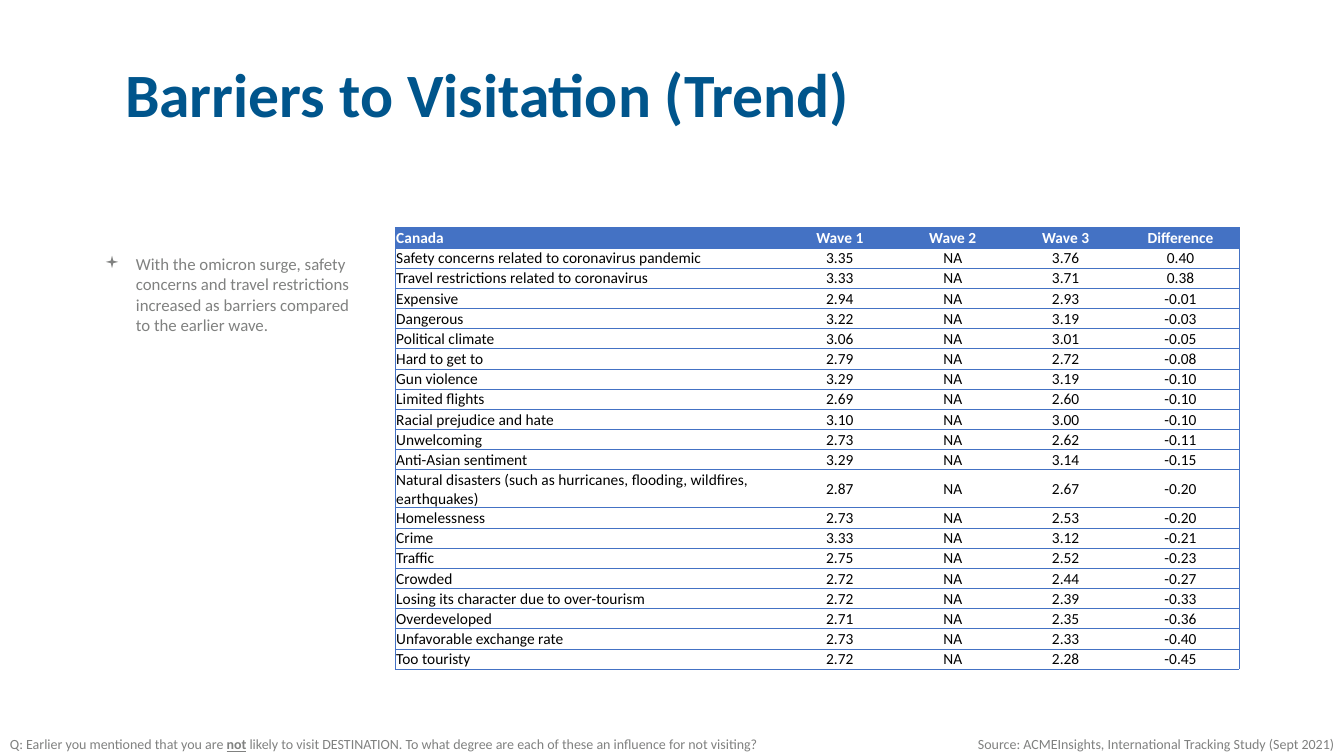
from lxml.etree import SubElement
from pptx import Presentation
from pptx.dml.color import RGBColor
from pptx.enum.text import MSO_ANCHOR, MSO_AUTO_SIZE, PP_ALIGN
from pptx.oxml.ns import qn
from pptx.util import Inches, Pt

HUES = {"title": "00558C", "grey": "808180", "blue": "4472C4",
        "white": "FFFFFF", "black": "000000"}
ROWS = [
    ("Canada", "Wave 1", "Wave 2", "Wave 3", "Difference"),
    ("Safety concerns related to coronavirus pandemic",
     "3.35", "NA", "3.76", "0.40"),
    ("Travel restrictions related to coronavirus",
     "3.33", "NA", "3.71", "0.38"),
    ("Expensive", "2.94", "NA", "2.93", "-0.01"),
    ("Dangerous", "3.22", "NA", "3.19", "-0.03"),
    ("Political climate", "3.06", "NA", "3.01", "-0.05"),
    ("Hard to get to", "2.79", "NA", "2.72", "-0.08"),
    ("Gun violence", "3.29", "NA", "3.19", "-0.10"),
    ("Limited flights", "2.69", "NA", "2.60", "-0.10"),
    ("Racial prejudice and hate", "3.10", "NA", "3.00", "-0.10"),
    ("Unwelcoming", "2.73", "NA", "2.62", "-0.11"),
    ("Anti-Asian sentiment", "3.29", "NA", "3.14", "-0.15"),
    ("Natural disasters (such as hurricanes, flooding, wildfires, "
     "earthquakes)", "2.87", "NA", "2.67", "-0.20"),
    ("Homelessness", "2.73", "NA", "2.53", "-0.20"),
    ("Crime", "3.33", "NA", "3.12", "-0.21"),
    ("Traffic", "2.75", "NA", "2.52", "-0.23"),
    ("Crowded", "2.72", "NA", "2.44", "-0.27"),
    ("Losing its character due to over-tourism",
     "2.72", "NA", "2.39", "-0.33"),
    ("Overdeveloped", "2.71", "NA", "2.35", "-0.36"),
    ("Unfavorable exchange rate", "2.73", "NA", "2.33", "-0.40"),
    ("Too touristy", "2.72", "NA", "2.28", "-0.45"),
]
WIDTHS = [3.85, 1.12, 1.12, 1.12, 1.16]
ROW_H = 0.2

deck = Presentation()
deck.slide_width, deck.slide_height = Inches(13.33), Inches(7.5)
slide = deck.slides.add_slide(deck.slide_layouts[5])


def style(par, size, hue, bold=False, align=PP_ALIGN.LEFT):
    par.alignment = align
    font = par.font
    font.name, font.size, font.bold = "Calibri", Pt(size), bold
    font.color.rgb = RGBColor.from_string(HUES[hue])


def add_note(box, parts, size, align=PP_ALIGN.LEFT):
    """Add a grey, wrapped text box with one run for each part."""
    frame = slide.shapes.add_textbox(*map(Inches, box)).text_frame
    frame.word_wrap = True
    par = frame.paragraphs[0]
    style(par, size, "grey", align=align)
    for part in parts:
        par.add_run().text = part
    return par


# Title
title = slide.shapes.title
title.left, title.top, title.width, title.height = map(
    Inches, (1.14, 0.54, 10.78, 1.97))
frame = title.text_frame
frame.text = "Barriers to Visitation (Trend)"
frame.vertical_anchor = MSO_ANCHOR.TOP
frame.auto_size = MSO_AUTO_SIZE.NONE
head = frame.paragraphs[0]
style(head, 44, "title", bold=True)
head.line_spacing, head.space_before = Pt(50), Pt(10)

# Finding
finding = add_note((0.94, 2.47, 2.63, 1.11), [
    "With the omicron surge, safety concerns and travel restrictions "
    "increased as barriers compared to the earlier wave."], 12)
props = finding._p.get_or_add_pPr()
props.set("marL", str(Inches(0.31)))
props.set("indent", str(-Inches(0.31)))
SubElement(props, qn("a:buFont"), typeface="Wingdings")
SubElement(props, qn("a:buChar"), char="▪")
# Bullet marks come before the default run properties
props.append(props.find(qn("a:defRPr")))

# Table
table = slide.shapes.add_table(
    len(ROWS), len(WIDTHS), Inches(3.92), Inches(2.26),
    Inches(sum(WIDTHS)), Inches(ROW_H * len(ROWS))).table
table.horz_banding = False
for col, width in zip(table.columns, WIDTHS):
    col.width = Inches(width)
for r, row in enumerate(ROWS):
    table.rows[r].height = Inches(ROW_H)
    for c, text in enumerate(row):
        cell = table.cell(r, c)
        cell.text = text
        cell.margin_left = cell.margin_right = cell.margin_top = Inches(0.01)
        cell.margin_bottom = 0
        cell.vertical_anchor = MSO_ANCHOR.MIDDLE if r else MSO_ANCHOR.BOTTOM
        style(cell.text_frame.paragraphs[0], 11, "black" if r else "white",
              bold=r == 0, align=PP_ALIGN.CENTER if c else PP_ALIGN.LEFT)
        edges = {"L": c == 0, "R": c == len(WIDTHS) - 1, "T": True, "B": True}
        tcpr = cell._tc.get_or_add_tcPr()
        for side, drawn in edges.items():
            line = SubElement(tcpr, qn("a:ln" + side), w=str(Pt(0.5)))
            if drawn:
                fill = SubElement(line, qn("a:solidFill"))
                SubElement(fill, qn("a:srgbClr"), val=HUES["blue"])
            else:
                SubElement(line, qn("a:noFill"))
        if r:
            cell.fill.background()
        else:
            cell.fill.solid()
            cell.fill.fore_color.rgb = RGBColor.from_string(HUES["blue"])

# Footer
add_note((7.4, 7.25, 5.93, 0.27),
         ["Source: ACMEInsights, International Tracking Study (Sept 2021)"],
         10, PP_ALIGN.RIGHT)
query = add_note((0, 7.25, 8.9, 0.27), [
    "Q: Earlier you mentioned that you are ", "not",
    " likely to visit DESTINATION. To what degree are each of these "
    "an influence for not visiting?"], 10)
query.runs[1].font.bold = query.runs[1].font.underline = True

deck.save("out.pptx")
